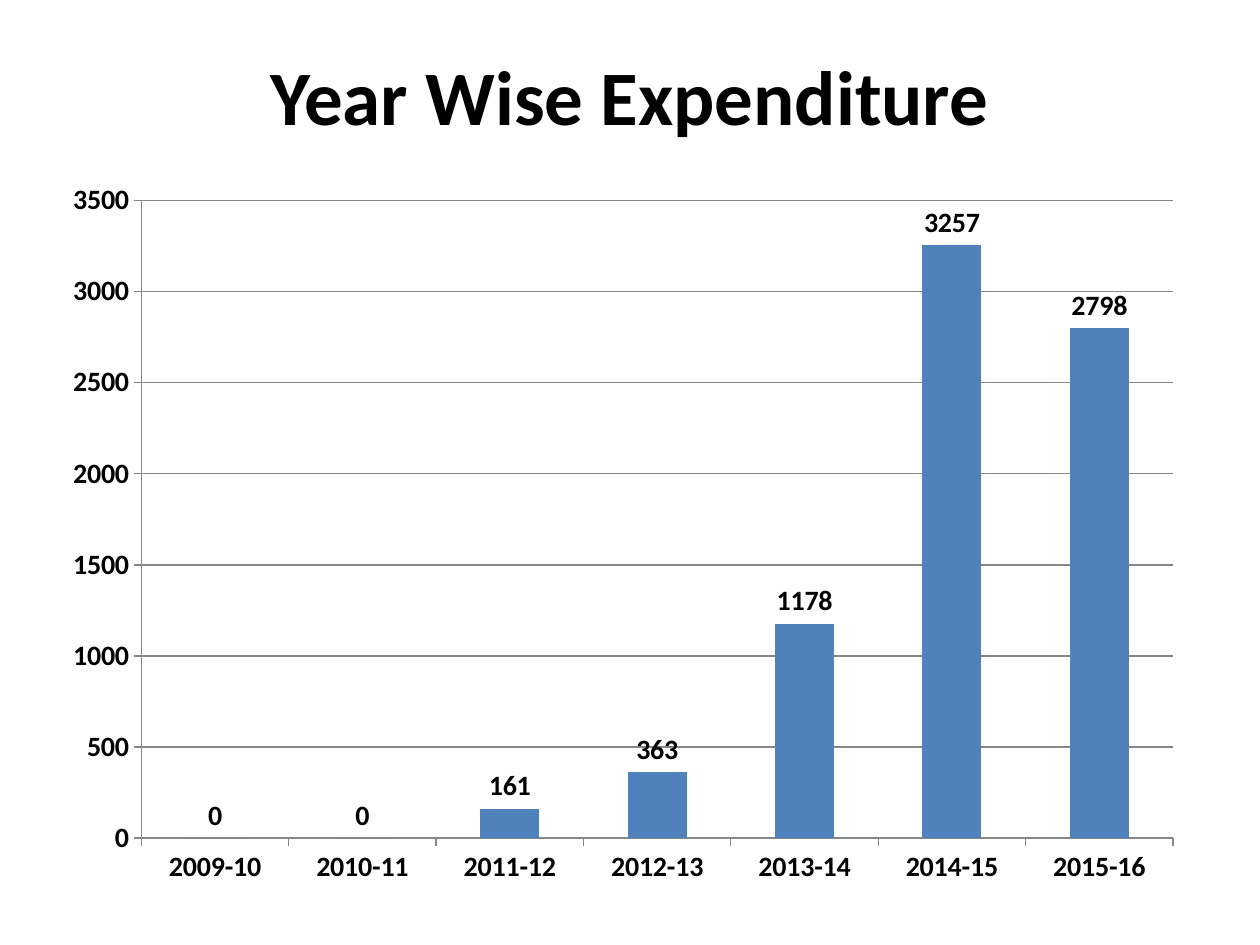
from lxml.etree import SubElement
from pptx import Presentation
from pptx.chart.data import CategoryChartData
from pptx.dml.color import RGBColor
from pptx.enum.chart import XL_CHART_TYPE, XL_LABEL_POSITION, XL_TICK_MARK
from pptx.enum.text import MSO_ANCHOR, PP_ALIGN
from pptx.oxml.ns import qn
from pptx.util import Inches, Pt

BLACK = RGBColor(0x00, 0x00, 0x00)
BLUE = RGBColor(0x4F, 0x81, 0xBD)
GRAY = RGBColor(0x87, 0x87, 0x87)
FONT = "Calibri"

EXPENDITURE = {
    "2009-10": 0,
    "2010-11": 0,
    "2011-12": 161,
    "2012-13": 363,
    "2013-14": 1178,
    "2014-15": 3257,
    "2015-16": 2798,
}


def style_font(font, size, bold=True):
    font.name = FONT
    font.size = Pt(size)
    font.bold = bold
    font.color.rgb = BLACK


def style_line(line):
    line.color.rgb = GRAY
    line.width = Pt(0.75)


def set_title(slide, prs, text):
    sp = slide.shapes.title
    sp.left, sp.width = int(prs.slide_width * 0.05), int(prs.slide_width * 0.9)
    sp.top, sp.height = Inches(0.17), Inches(1.17)
    tf = sp.text_frame
    tf.text = text
    tf.vertical_anchor = MSO_ANCHOR.MIDDLE
    p = tf.paragraphs[0]
    p.alignment = PP_ALIGN.CENTER
    style_font(p.runs[0].font, 44)


def set_plot_area(chart, x, y, w, h):
    plot_area = chart.plots[0]._element.getparent()
    for old in plot_area.findall(qn("c:layout")):
        plot_area.remove(old)
    layout = SubElement(plot_area, qn("c:layout"))
    plot_area.insert(0, layout)
    manual = SubElement(layout, qn("c:manualLayout"))
    settings = [("layoutTarget", "inner"), ("xMode", "edge"), ("yMode", "edge"),
                ("x", x), ("y", y), ("w", w), ("h", h)]
    for tag, value in settings:
        SubElement(manual, qn(f"c:{tag}")).set("val", str(value))


def style_axis(axis):
    axis.major_tick_mark = XL_TICK_MARK.OUTSIDE
    axis.minor_tick_mark = XL_TICK_MARK.NONE
    style_font(axis.tick_labels.font, 16)
    style_line(axis.format.line)


def add_column_chart(slide, values):
    data = CategoryChartData()
    data.categories = list(values)
    data.add_series("Series 1", list(values.values()))
    chart = slide.shapes.add_chart(
        XL_CHART_TYPE.COLUMN_CLUSTERED,
        Inches(0.58), Inches(1.42), Inches(9), Inches(5.75), data).chart
    chart.has_title = False
    chart.has_legend = False
    style_font(chart.font, 10, bold=False)
    set_plot_area(chart, 0.06, 0.03, 0.91, 0.88)

    for axis in (chart.category_axis, chart.value_axis):
        style_axis(axis)
    axis = chart.value_axis
    axis.minimum_scale, axis.maximum_scale, axis.major_unit = 0, 3500, 500
    axis.has_major_gridlines = True
    style_line(axis.major_gridlines.format.line)

    plot = chart.plots[0]
    plot.gap_width = 150
    plot.vary_by_categories = False
    fill = plot.series[0].format.fill
    fill.solid()
    fill.fore_color.rgb = BLUE
    labels = plot.series[0].data_labels
    labels.show_value = True
    labels.position = XL_LABEL_POSITION.OUTSIDE_END
    style_font(labels.font, 16)


def main():
    prs = Presentation()
    prs.slide_width, prs.slide_height = Inches(10), Inches(7.5)
    slide = prs.slides.add_slide(prs.slide_layouts[5])
    set_title(slide, prs, "Year Wise Expenditure")
    add_column_chart(slide, EXPENDITURE)
    prs.save("out.pptx")


if __name__ == "__main__":
    main()
